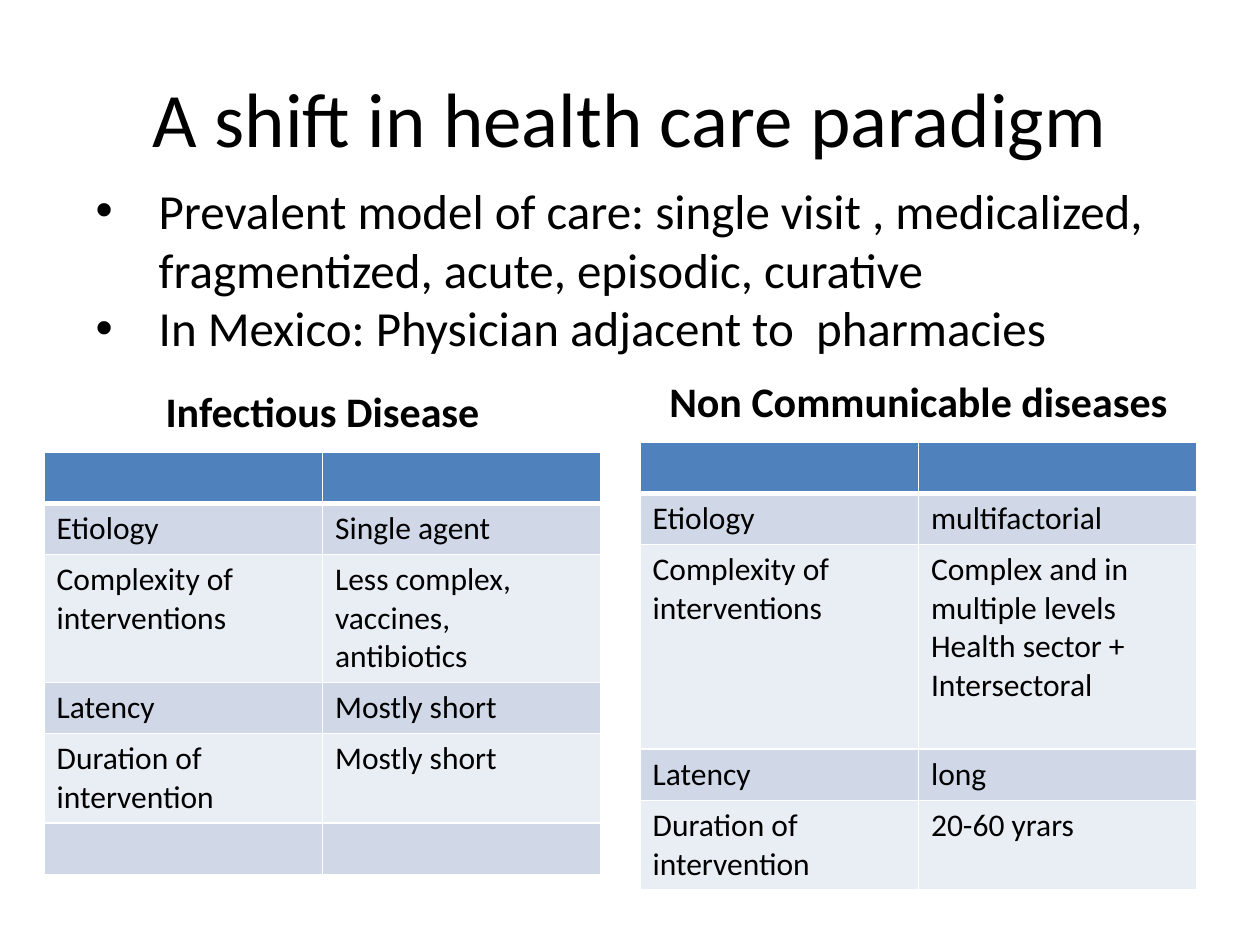
from dataclasses import dataclass

from lxml import etree
from pptx import Presentation
from pptx.dml.color import RGBColor
from pptx.enum import text
from pptx.oxml import ns
from pptx.util import Inches, Pt

# Page grid: a hundred columns by seventy-five rows
UNIT = Inches(0.1)
COLUMNS, ROWS = 100, 75
FONT = "Calibri"
BLACK = RGBColor(0x00, 0x00, 0x00)
WHITE = RGBColor(0xFF, 0xFF, 0xFF)
HEADER = RGBColor(0x4F, 0x81, 0xBD)
BANDS = (RGBColor(0xD0, 0xD8, 0xE8), RGBColor(0xE9, 0xED, 0xF4))
TEXT_LINE, CELL_PADDING = 3.05, 1  # row heights, in grid rows


@dataclass
class Area:
    left: float
    top: float
    width: float
    height: float

    def lengths(self) -> list[int]:
        return [round(value * UNIT)
                for value in (self.left, self.top, self.width, self.height)]


@dataclass
class Row:
    label: str = ""
    value: str = ""
    lines: int = 1


@dataclass
class Comparison:
    heading: str
    placeholder: int
    left: float
    top: float
    rows: list[Row]


COMPARISON_WIDTH, HEADING_HEIGHT, TABLE_OFFSET = 44.2, 7, 7.8
COMPARISONS = [
    Comparison("Infectious Disease", 1, 3.5, 28.1, [
        Row(),
        Row("Etiology", "Single agent"),
        Row("Complexity of interventions",
            "Less complex, vaccines, antibiotics", 3),
        Row("Latency", "Mostly short"),
        Row("Duration of intervention", "Mostly short", 2),
        Row(),
    ]),
    Comparison("Non Communicable diseases", 3, 50.8, 27.3, [
        Row(),
        Row("Etiology", "multifactorial"),
        Row("Complexity of interventions",
            "Complex and in multiple levels\nHealth sector + Intersectoral", 5),
        Row("Latency", "long"),
        Row("Duration of intervention", "20-60 yrars", 2),
    ]),
]
BULLETS = ("Prevalent model of care: single visit , medicalized, "
           "fragmentized, acute, episodic, curative\n"
           "In Mexico: Physician adjacent to  pharmacies")


def write(frame, words: str, *, size: float, bold: bool = False,
          align=text.PP_ALIGN.LEFT, bullet: bool = False) -> None:
    frame.text = words
    for para in frame.paragraphs:
        para.alignment = align
        para.font.size, para.font.bold = Pt(size), bold
        for span in para.runs:
            span.font.name = FONT
            span.font.size, span.font.bold = Pt(size), bold
            span.font.color.rgb = BLACK
        if bullet:
            para.space_before = Pt(0)
            props = para._p.get_or_add_pPr()
            props.set("marL", str(Inches(0.5)))
            props.set("indent", str(Inches(-0.5)))
            etree.SubElement(props, ns.qn("a:buFont"), typeface="Arial")
            etree.SubElement(props, ns.qn("a:buChar"), char="•")


def fill_placeholder(page, index: int, area: Area, words: str, *,
                     anchor, **style) -> None:
    box = page.placeholders[index]
    box.left, box.top, box.width, box.height = area.lengths()
    frame = box.text_frame
    frame.word_wrap = True
    frame.auto_size = text.MSO_AUTO_SIZE.NONE
    frame.vertical_anchor = anchor
    write(frame, words, **style)


def add_borders(cell, *, top: float, bottom: float) -> None:
    props = cell._tc.get_or_add_tcPr()
    for side, width in (("L", 1), ("R", 1), ("T", top), ("B", bottom)):
        line = etree.SubElement(props, ns.qn(f"a:ln{side}"), w=str(Pt(width)))
        solid = etree.SubElement(line, ns.qn("a:solidFill"))
        etree.SubElement(solid, ns.qn("a:srgbClr"), val=str(WHITE))


def add_comparison(page, item: Comparison) -> None:
    # Heading
    fill_placeholder(
        page, item.placeholder,
        Area(item.left, item.top, COMPARISON_WIDTH, HEADING_HEIGHT),
        item.heading, size=24, bold=True, align=text.PP_ALIGN.CENTER,
        anchor=text.MSO_ANCHOR.BOTTOM)

    # Table with a header and alternating bands
    heights = [CELL_PADDING + TEXT_LINE * row.lines for row in item.rows]
    area = Area(item.left, item.top + TABLE_OFFSET, COMPARISON_WIDTH, sum(heights))
    table = page.shapes.add_table(len(item.rows), 2, *area.lengths()).table
    for number, (row, height) in enumerate(zip(item.rows, heights)):
        table.rows[number].height = round(height * UNIT)
        for cell, words in zip(table.rows[number].cells, (row.label, row.value)):
            write(cell.text_frame, words, size=18)
            add_borders(cell, top=3 if number == 1 else 1,
                        bottom=3 if number == 0 else 1)
            cell.fill.solid()
            cell.fill.fore_color.rgb = BANDS[(number - 1) % 2] if number else HEADER


def main() -> None:
    deck = Presentation()
    deck.slide_width, deck.slide_height = COLUMNS * UNIT, ROWS * UNIT
    page = deck.slides.add_slide(deck.slide_layouts.get_by_name("Comparison"))

    # Title and key points
    fill_placeholder(page, 0, Area(5, 3, 90, 12.5),
                     "A shift in health care paradigm", size=44,
                     align=text.PP_ALIGN.CENTER, anchor=text.MSO_ANCHOR.MIDDLE)
    fill_placeholder(page, 2, Area(6.6, 13.8, 86, 15.1), BULLETS, size=28,
                     bullet=True, anchor=text.MSO_ANCHOR.TOP)

    # The two disease models
    for item in COMPARISONS:
        add_comparison(page, item)

    # Unused content placeholder
    unused = page.placeholders[4].element
    unused.getparent().remove(unused)
    deck.save("out.pptx")


if __name__ == "__main__":
    main()
